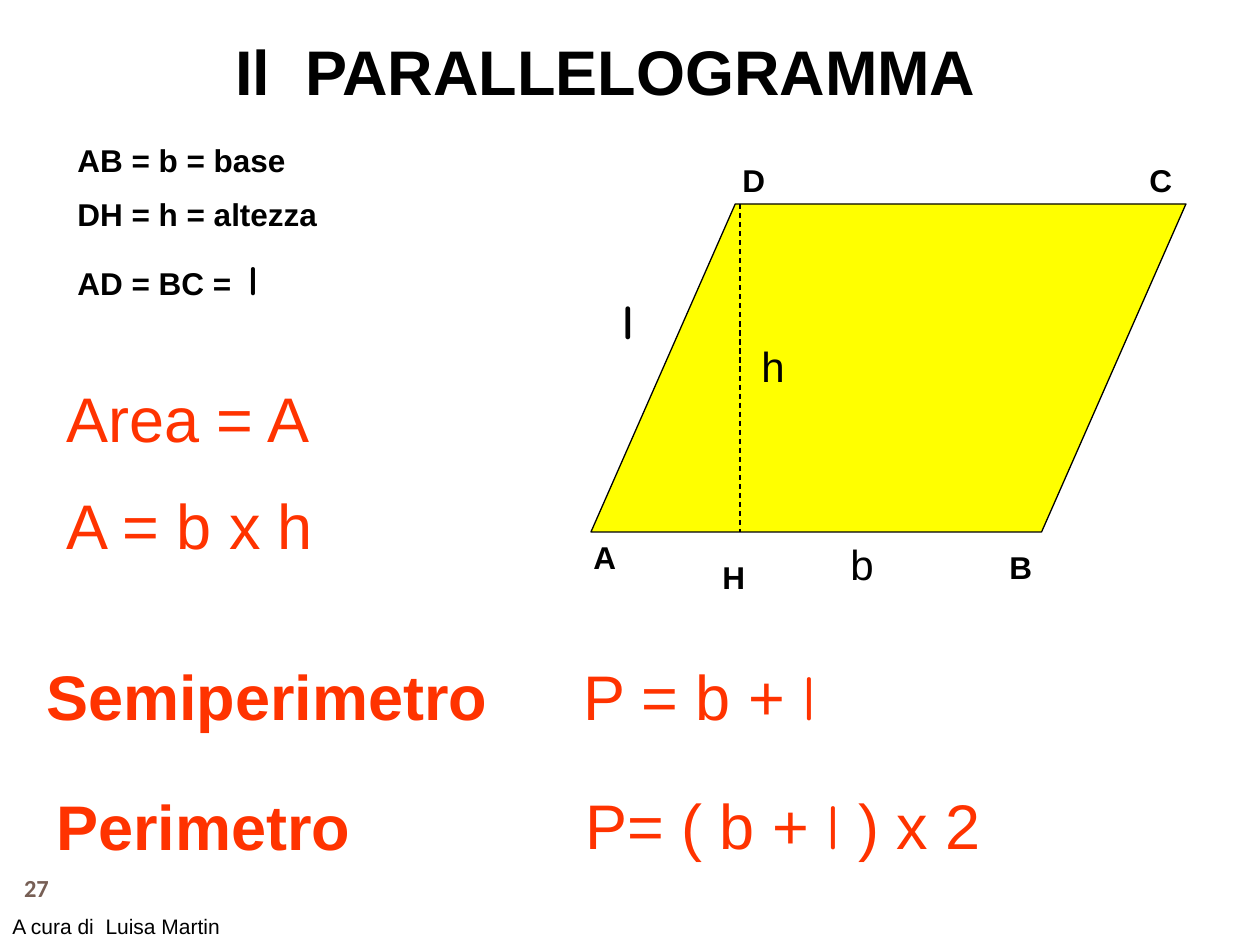
from lxml import etree
from pptx import Presentation
from pptx.dml.color import RGBColor
from pptx.enum.dml import MSO_LINE
from pptx.enum.shapes import MSO_CONNECTOR, MSO_SHAPE
from pptx.enum.text import MSO_ANCHOR, MSO_AUTO_SIZE, PP_ALIGN
from pptx.oxml.ns import qn
from pptx.util import Emu, Pt

STRAIGHT = MSO_CONNECTOR.STRAIGHT
PARALLELOGRAM = MSO_SHAPE.PARALLELOGRAM
DASH = MSO_LINE.DASH
TOP, MIDDLE = MSO_ANCHOR.TOP, MSO_ANCHOR.MIDDLE
LEFT, CENTER = PP_ALIGN.LEFT, PP_ALIGN.CENTER
GROW, FIXED = MSO_AUTO_SIZE.SHAPE_TO_FIT_TEXT, MSO_AUTO_SIZE.NONE

BLACK = RGBColor(0x00, 0x00, 0x00)
YELLOW = RGBColor(0xFF, 0xFF, 0x00)
ORANGE = RGBColor(0xFF, 0x33, 0x00)
BROWN = RGBColor(0x77, 0x5F, 0x55)
SIDE_FONT = "Comic Neue"
PX = 914400 / 126


def px(*lengths):
    return [Emu(round(length * PX)) for length in lengths]


def add_text(box, *lines, size=18, color=BLACK, bold=False, font="Arial", side_size=None,
             align=LEFT, anchor=TOP, fit=GROW, spaced=True):
    frame = slide.shapes.add_textbox(*px(*box)).text_frame
    frame.word_wrap = True
    frame.auto_size = fit
    frame.vertical_anchor = anchor
    for index, line in enumerate(lines):
        paragraph = frame.add_paragraph() if index else frame.paragraphs[0]
        paragraph.alignment = align
        if spaced:
            before = etree.SubElement(paragraph._p.get_or_add_pPr(), qn("a:spcBef"))
            etree.SubElement(before, qn("a:spcPct"), val="50000")
        for piece in [line] if isinstance(line, str) else line:
            is_side = piece == "l"
            run = paragraph.add_run()
            run.text = piece
            run.font.name = SIDE_FONT if is_side else font
            run.font.size = Pt(side_size if is_side and side_size else size)
            run.font.bold = bold
            run.font.color.rgb = color


prs = Presentation()
prs.slide_width, prs.slide_height = px(1260, 945)
slide = prs.slides.add_slide(prs.slide_layouts[6])

add_text((223, 26, 784, 89), "Il  PARALLELOGRAMMA", size=36, bold=True)

figure = slide.shapes.add_shape(PARALLELOGRAM, *px(591, 204, 595, 328))
figure.adjustments[0] = 0.44
figure.shadow.inherit = False
figure.fill.solid()
figure.fill.fore_color.rgb = YELLOW
figure.line.color.rgb = BLACK
figure.line.width = Pt(0.75)

height = slide.shapes.add_connector(STRAIGHT, *px(740, 204, 740, 532))
height.line.color.rgb = BLACK
height.line.width = Pt(0.75)
height.line.dash_style = DASH
etree.SubElement(height._element.spPr, qn("a:effectLst"))

for vertex, left, top in (("A", 581, 532), ("D", 730, 155), ("C", 1137, 155),
                          ("B", 997, 542), ("H", 710, 552)):
    add_text((left, top, 70, 50), vertex, bold=True)

add_text((610, 284, 49, 72), "l", size=28, bold=True)
add_text((838, 532, 59, 64), "b", size=24)
add_text((749, 334, 139, 63), "h", size=24)

add_text((65, 135, 397, 183), "AB = b = base", "DH = h = altezza",
         ("AD = BC =  ", "l"), bold=True, side_size=24)

for box, lines, bold in (
    ((54, 373, 328, 204), ("Area = A", "A = b x h"), False),
    ((34, 651, 517, 89), ("Semiperimetro",), True),
    ((571, 651, 377, 89), (("P = b + ", "l"),), False),
    ((44, 781, 358, 88), ("Perimetro",), True),
    ((573, 780, 464, 89), (("P= ( b + ", "l", " ) x 2"),), False),
):
    add_text(box, *lines, size=36, color=ORANGE, bold=bold)

add_text((0, 861, 73, 53), "27", size=14, color=BROWN, bold=True, font="Calibri",
         align=CENTER, anchor=MIDDLE, fit=FIXED, spaced=False)
add_text((0, 907, 238, 38), "A cura di  Luisa Martin", size=12)

prs.save("out.pptx")
